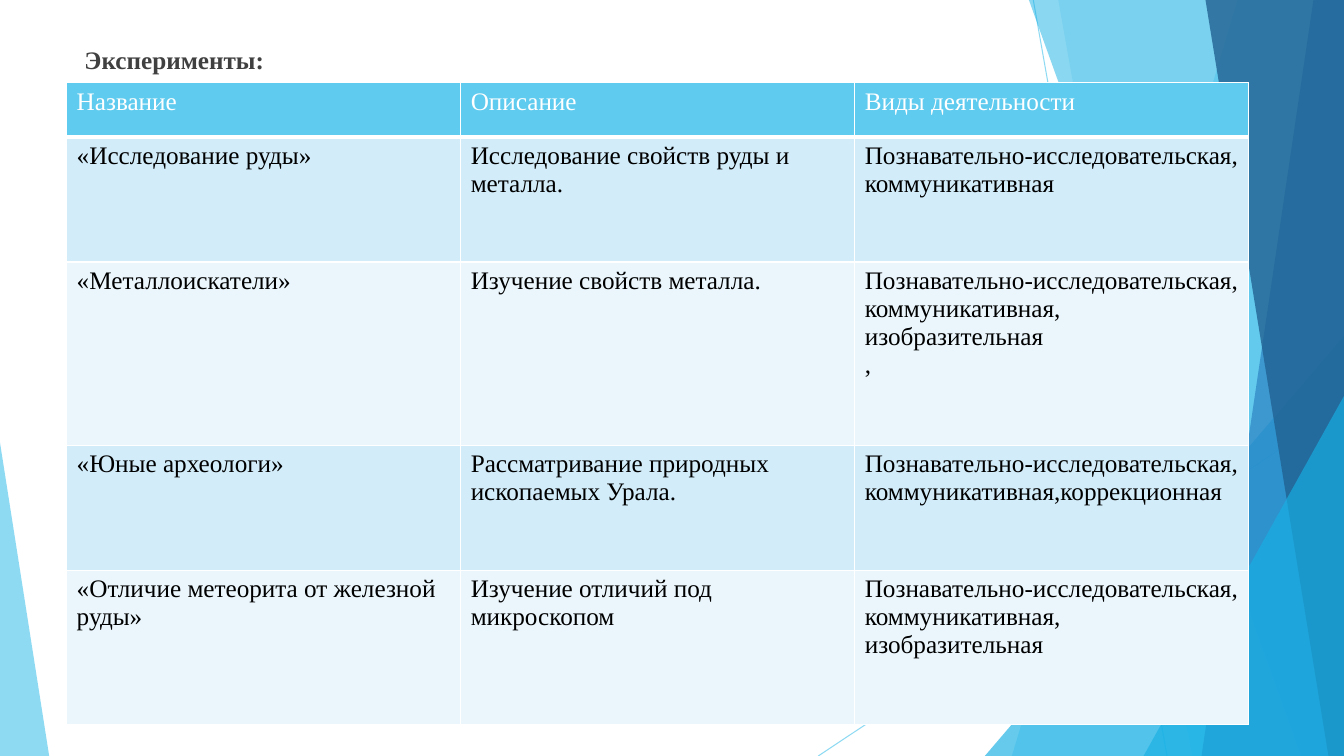
"""Build the slide with the table of experiments."""
from dataclasses import dataclass

from lxml import etree
from pptx import Presentation
from pptx import util as u
from pptx.dml.color import RGBColor
from pptx.enum import shapes, text
from pptx.oxml import ns


@dataclass(frozen=True)
class Theme:
    font: str = "Times New Roman"
    size: int = 18
    sky: str = "5FCBEF"
    aqua: str = "17B0E4"
    blue: str = "2E83C3"
    navy: str = "226292"
    white: str = "FFFFFF"
    black: str = "000000"
    gray: str = "404040"
    bands: tuple = ("D2ECF9", "EAF6FC")
    thin: int = 1
    thick: int = 3


THEME = Theme()
WIDE, HIGH = 33.87, 19.05

LINES = [
    (26.04, 0, 29.41, HIGH),
    (WIDE, 10.24, 20.62, HIGH),
]
BACK = [
    (31.19, 25.5, THEME.sky, 36),
    (26.67, 30.05, THEME.sky, 20),
]
FRONT = [
    (25.93, 32.79, THEME.aqua, 50),
    (33.1, 30.28, THEME.blue, 70),
    (30.38, 33.48, THEME.navy, 80),
]
COLS = [9.93] * 3
ROWS = [1.37, 3.15, 4.62, 3.15, 3.89]
CELLS = [
    ("Название", "Описание", "Виды деятельности"),
    ("«Исследование руды»", "Исследование свойств руды и металла.",
     "Познавательно-исследовательская,\nкоммуникативная"),
    ("«Металлоискатели»", "Изучение свойств металла.",
     "Познавательно-исследовательская, коммуникативная, изобразительная\n,"),
    ("«Юные археологи»", "Рассматривание природных ископаемых Урала.",
     "Познавательно-исследовательская,\nкоммуникативная,коррекционная"),
    ("«Отличие метеорита от железной руды»", "Изучение отличий под микроскопом",
     "Познавательно-исследовательская,\nкоммуникативная, изобразительная"),
]


def paint(fill, tone):
    """Give a fill one solid colour."""
    fill.solid()
    fill.fore_color.rgb = RGBColor.from_string(tone)


def fade(shape, part):
    """Set the opacity of a shape's colours in percent."""
    for tone in shape._element.iter(ns.qn("a:srgbClr")):
        etree.SubElement(tone, ns.qn("a:alpha"), val=str(part * 1000))


def finish(shape, tone, part):
    """Give a shape a clear fill with no line or shadow."""
    shape.shadow.inherit = False
    paint(shape.fill, tone)
    shape.line.fill.background()
    fade(shape, part)


def add_line(slide, x1, y1, x2, y2):
    """Draw a thin clear line."""
    line = slide.shapes.add_connector(
        shapes.MSO_CONNECTOR.STRAIGHT, u.Cm(x1), u.Cm(y1), u.Cm(x2), u.Cm(y2))
    line.line.width = u.Pt(0.75)
    paint(line.line.fill, THEME.sky)
    etree.SubElement(line._element.spPr, ns.qn("a:effectLst"))
    fade(line, 70)


def add_band(slide, top, base, tone, part):
    """Draw a slanted band that runs to the right edge."""
    spots = [(WIDE, 0), (WIDE, HIGH), (base, HIGH)]
    form = slide.shapes.build_freeform(u.Cm(top), u.Cm(0))
    form.add_line_segments([(u.Cm(x), u.Cm(y)) for x, y in spots])
    finish(form.convert_to_shape(), tone, part)


def add_wedge(slide, left, width, height, tip, tone, part):
    """Draw a triangle that stands on the bottom edge."""
    wedge = slide.shapes.add_shape(
        shapes.MSO_SHAPE.ISOSCELES_TRIANGLE,
        u.Cm(left), u.Cm(HIGH - height), u.Cm(width), u.Cm(height))
    wedge.adjustments[0] = tip
    finish(wedge, tone, part)


def write(frame, words, tone, bold=False):
    """Fill a text frame and set its font."""
    frame.text = words
    for para in frame.paragraphs:
        para.font.name = THEME.font
        para.font.size = u.Pt(THEME.size)
        para.font.bold = bold
        para.font.color.rgb = RGBColor.from_string(tone)


def add_title(slide):
    """Place the heading."""
    box = slide.shapes.add_textbox(u.Cm(1.88), u.Cm(0.99), u.Cm(28.02), u.Cm(16.6))
    box.text_frame.word_wrap = True
    box.text_frame.vertical_anchor = text.MSO_ANCHOR.TOP
    write(box.text_frame, "Эксперименты:", THEME.gray, True)


def edge(cell, row):
    """Draw white borders, thick below the header."""
    rules = {"L": THEME.thin, "R": THEME.thin,
             "T": THEME.thick if row == 1 else THEME.thin,
             "B": THEME.thick if row == 0 else THEME.thin}
    props = cell._tc.get_or_add_tcPr()
    for side, width in rules.items():
        line = etree.SubElement(props, ns.qn(f"a:ln{side}"), w=str(u.Pt(width)))
        fill = etree.SubElement(line, ns.qn("a:solidFill"))
        etree.SubElement(fill, ns.qn("a:srgbClr"), val=THEME.white)


def add_grid(slide):
    """Place the table of experiments."""
    grid = slide.shapes.add_table(
        len(ROWS), len(COLS), u.Cm(1.68), u.Cm(2.08),
        u.Cm(sum(COLS)), u.Cm(sum(ROWS))).table
    for col, width in zip(grid.columns, COLS):
        col.width = u.Cm(width)
    for row, height in zip(grid.rows, ROWS):
        row.height = u.Cm(height)
    for r, line in enumerate(CELLS):
        for c, words in enumerate(line):
            cell = grid.cell(r, c)
            edge(cell, r)
            paint(cell.fill, THEME.bands[(r - 1) % 2] if r else THEME.sky)
            write(cell.text_frame, words, THEME.black if r else THEME.white)


def main():
    """Build and save the slide."""
    deck = Presentation()
    deck.slide_width, deck.slide_height = u.Cm(WIDE), u.Cm(HIGH)
    slide = deck.slides.add_slide(deck.slide_layouts[6])
    for line in LINES:
        add_line(slide, *line)
    for band in BACK:
        add_band(slide, *band)
    add_wedge(slide, 24.82, 9.05, 10.59, 1, THEME.aqua, 66)
    for band in FRONT:
        add_band(slide, *band)
    add_wedge(slide, 28.82, 5.05, 9.07, 1, THEME.aqua, 66)
    add_wedge(slide, 0, 1.24, 7.9, 0, THEME.sky, 70)
    add_title(slide)
    add_grid(slide)
    deck.save("out.pptx")


if __name__ == "__main__":
    main()
